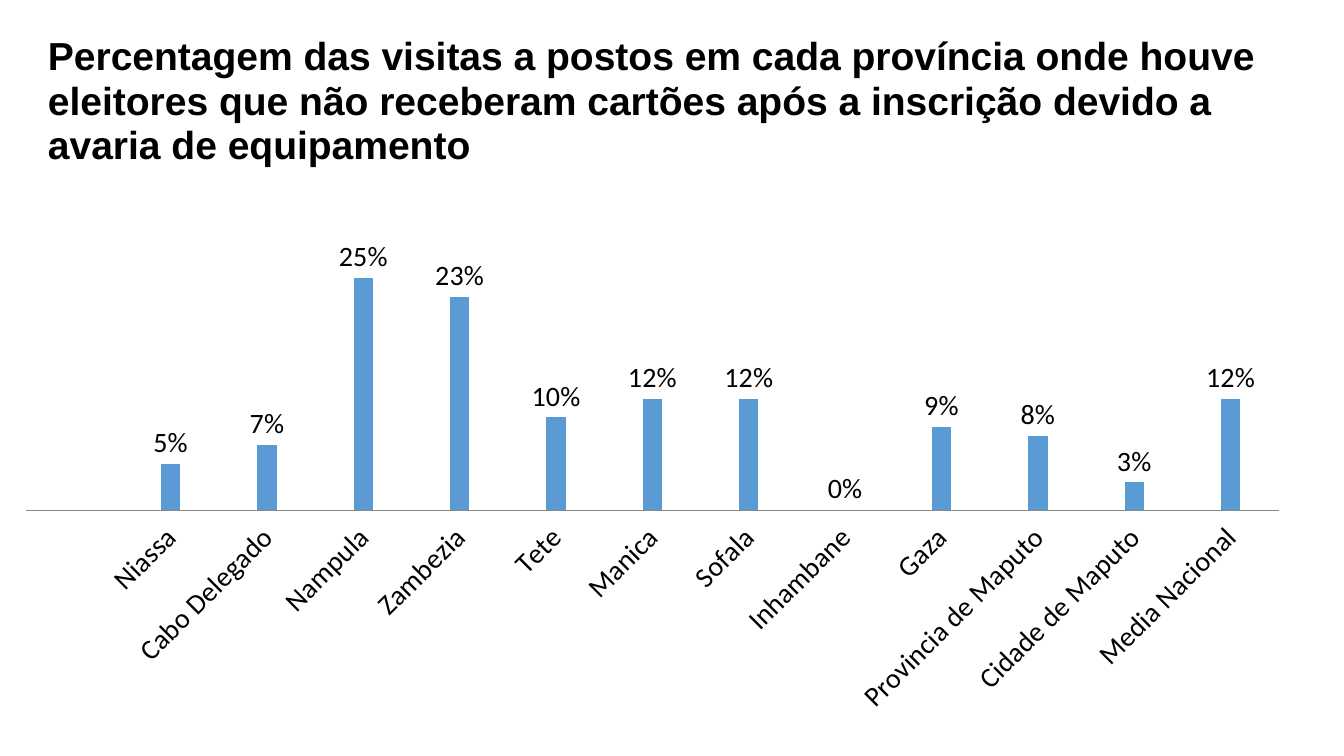
from lxml.etree import SubElement
from pptx import Presentation
from pptx.chart.data import CategoryChartData
from pptx.dml.color import RGBColor
from pptx.enum.chart import XL_CHART_TYPE, XL_LABEL_POSITION, XL_TICK_LABEL_POSITION, XL_TICK_MARK
from pptx.enum.text import MSO_ANCHOR
from pptx.oxml.ns import qn
from pptx.util import Pt

BLACK = RGBColor(0x00, 0x00, 0x00)
GRAY = RGBColor(0x89, 0x89, 0x89)
BLUE = RGBColor(0x5B, 0x9B, 0xD5)
ORANGE = RGBColor(0xED, 0x7D, 0x31)
SILVER = RGBColor(0xA5, 0xA5, 0xA5)

TITLE = ("Percentagem das visitas a postos em cada província onde houve eleitores "
         "que não receberam cartões após a inscrição devido a avaria de equipamento")
VISITS = [
    ("", 0), ("Niassa", 0.05), ("Cabo Delegado", 0.07), ("Nampula", 0.25),
    ("Zambezia", 0.23), ("Tete", 0.1), ("Manica", 0.12), ("Sofala", 0.12),
    ("Inhambane", 0), ("Gaza", 0.09), ("Provincia de Maputo", 0.08),
    ("Cidade de Maputo", 0.03), ("Media Nacional", 0.12),
]
PLOT_AREA = {"layoutTarget": "inner", "xMode": "edge", "yMode": "edge",
             "x": 0.02, "y": 0.02, "w": 0.96, "h": 0.56}


def px(n):
    return round(n * 914400 / 100.8)


def apply(target, **values):
    for name, value in values.items():
        setattr(target, name, value)


class Deck:
    heading = {"name": "Arial", "size": Pt(27.9), "bold": True}
    body = {"name": "Calibri", "size": Pt(20), "bold": False}

    def __init__(self):
        self.prs = Presentation()
        apply(self.prs, slide_width=px(1344), slide_height=px(756))
        self.s = self.prs.slides.add_slide(self.prs.slide_layouts[6])

    def style(self, font, values):
        apply(font, **values)
        font.color.rgb = BLACK

    def title(self, text, x, y, w, h):
        sp = self.s.shapes.add_textbox(px(x), px(y), px(w), px(h))
        tf = sp.text_frame
        apply(tf, word_wrap=True, vertical_anchor=MSO_ANCHOR.TOP,
              margin_left=px(10), margin_right=px(10), margin_top=0, margin_bottom=0)
        p = tf.paragraphs[0]
        p.line_spacing = 0.95
        r = p.add_run()
        r.text = text
        self.style(r.font, self.heading)

    def columns(self, rows, x, y, w, h):
        data = CategoryChartData(number_format="0%")
        data.categories = [name for name, _ in rows]
        blank = [None] * len(rows)
        for i, values in enumerate((blank, [v for _, v in rows], blank), 1):
            data.add_series(f"Series {i}", values)
        chart = self.s.shapes.add_chart(
            XL_CHART_TYPE.COLUMN_CLUSTERED, px(x), px(y), px(w), px(h), data).chart
        apply(chart, has_legend=False, has_title=False)
        self.style(chart.font, self.body)
        self.axes(chart)
        plot = chart.plots[0]
        apply(plot, gap_width=150, overlap=-25, vary_by_categories=False)
        for series, color in zip(plot.series, (ORANGE, BLUE, SILVER)):
            series.format.fill.solid()
            series.format.fill.fore_color.rgb = color
        self.labels(plot.series[1])
        self.layout(chart)

    def axes(self, chart):
        apply(chart.value_axis, visible=False, has_major_gridlines=False,
              minimum_scale=0, maximum_scale=0.3)
        axis = chart.category_axis
        apply(axis, major_tick_mark=XL_TICK_MARK.NONE, minor_tick_mark=XL_TICK_MARK.NONE,
              has_major_gridlines=False, tick_label_position=XL_TICK_LABEL_POSITION.LOW)
        axis.format.line.color.rgb = GRAY
        axis.format.line.width = Pt(0.75)
        self.style(axis.tick_labels.font, self.body)
        axis._element.find(qn("c:txPr")).find(qn("a:bodyPr")).set("rot", "-2700000")

    def labels(self, series):
        labels = series.data_labels
        apply(labels, show_value=True, number_format="0%", number_format_is_linked=False,
              position=XL_LABEL_POSITION.OUTSIDE_END)
        self.style(labels.font, self.body)
        hidden = labels._element.makeelement(qn("c:dLbl"))
        SubElement(hidden, qn("c:idx")).set("val", "0")
        SubElement(hidden, qn("c:delete")).set("val", "1")
        labels._element.insert(0, hidden)

    def layout(self, chart):
        area = chart._chartSpace.chart.plotArea
        for old in area.findall(qn("c:layout")):
            area.remove(old)
        layout = area.makeelement(qn("c:layout"))
        area.insert(0, layout)
        manual = SubElement(layout, qn("c:manualLayout"))
        for tag, value in PLOT_AREA.items():
            SubElement(manual, qn(f"c:{tag}")).set("val", str(value))

    def save(self):
        self.prs.save("out.pptx")


def main():
    deck = Deck()
    deck.title(TITLE, 38, 35, 1267, 146)
    deck.columns(VISITS, 0, 222, 1305, 497)
    deck.save()


if __name__ == "__main__":
    main()
